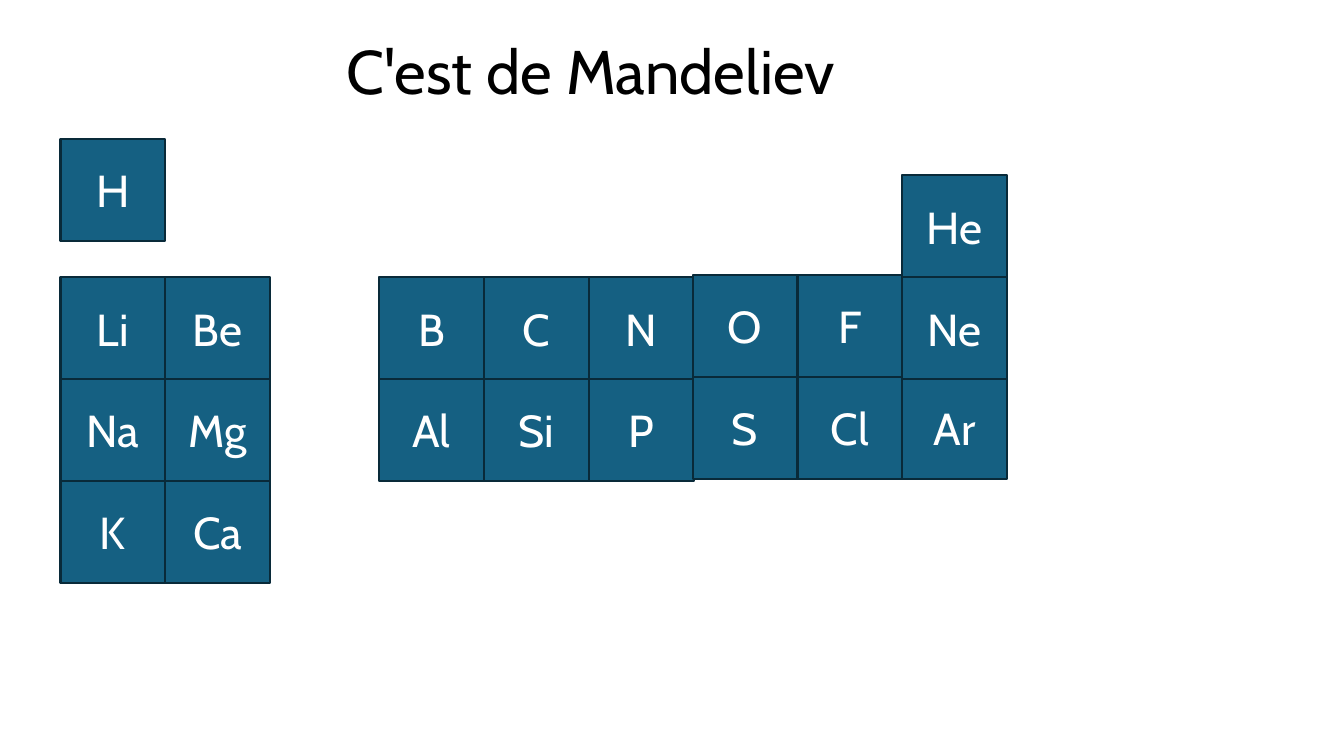
from pptx import Presentation
from pptx.dml.color import RGBColor
from pptx.enum.shapes import MSO_SHAPE
from pptx.enum.text import MSO_ANCHOR, MSO_AUTO_SIZE, PP_ALIGN
from pptx.util import Pt

PX = 9144  # 100 px to the inch
BLACK = RGBColor(0x00, 0x00, 0x00)
WHITE = RGBColor(0xFF, 0xFF, 0xFF)
TEAL = RGBColor(0x15, 0x60, 0x82)
DARK_TEAL = RGBColor(0x09, 0x2A, 0x39)

CELL_WIDTH, CELL_HEIGHT = 104, 101

# Left, top and rows of symbols of each block of the periodic table
BLOCKS = [
    (60, 138, ["H"]),
    (60, 275, ["Li Be", "Na Mg", "K Ca"]),
    (376, 275, ["B C N", "Al Si P"]),
    (687, 273, ["O F", "S Cl Ar"]),
    (895, 174, ["He", "Ne"]),
]


def write(shape, text, size, color, align, line_spacing=1.0):
    frame = shape.text_frame
    frame.word_wrap = True
    frame.auto_size = MSO_AUTO_SIZE.NONE
    frame.vertical_anchor = MSO_ANCHOR.MIDDLE
    paragraph = frame.paragraphs[0]
    paragraph.alignment = align
    paragraph.line_spacing = line_spacing
    run = paragraph.add_run()
    run.text = text
    run.font.name = "Cabin"
    run.font.size = Pt(size)
    run.font.color.rgb = color


prs = Presentation()
prs.slide_width, prs.slide_height = 1333 * PX, 750 * PX
slide = prs.slides.add_slide(prs.slide_layouts[5])

title = slide.shapes.title
title.left, title.top = 334 * PX, 1 * PX
title.width, title.height = 1150 * PX, 145 * PX
write(title, "C'est de Mandeliev", size=44, color=BLACK,
      align=PP_ALIGN.LEFT, line_spacing=0.9)

for left, top, rows in BLOCKS:
    for row, symbols in enumerate(rows):
        for column, symbol in enumerate(symbols.split()):
            element = slide.shapes.add_shape(
                MSO_SHAPE.RECTANGLE,
                (left + column * CELL_WIDTH) * PX,
                (top + row * CELL_HEIGHT) * PX,
                CELL_WIDTH * PX, CELL_HEIGHT * PX)
            element.shadow.inherit = False
            element.fill.solid()
            element.fill.fore_color.rgb = TEAL
            element.line.color.rgb = DARK_TEAL
            element.line.width = Pt(1.5)
            write(element, symbol, size=32, color=WHITE, align=PP_ALIGN.CENTER)

prs.save("out.pptx")
